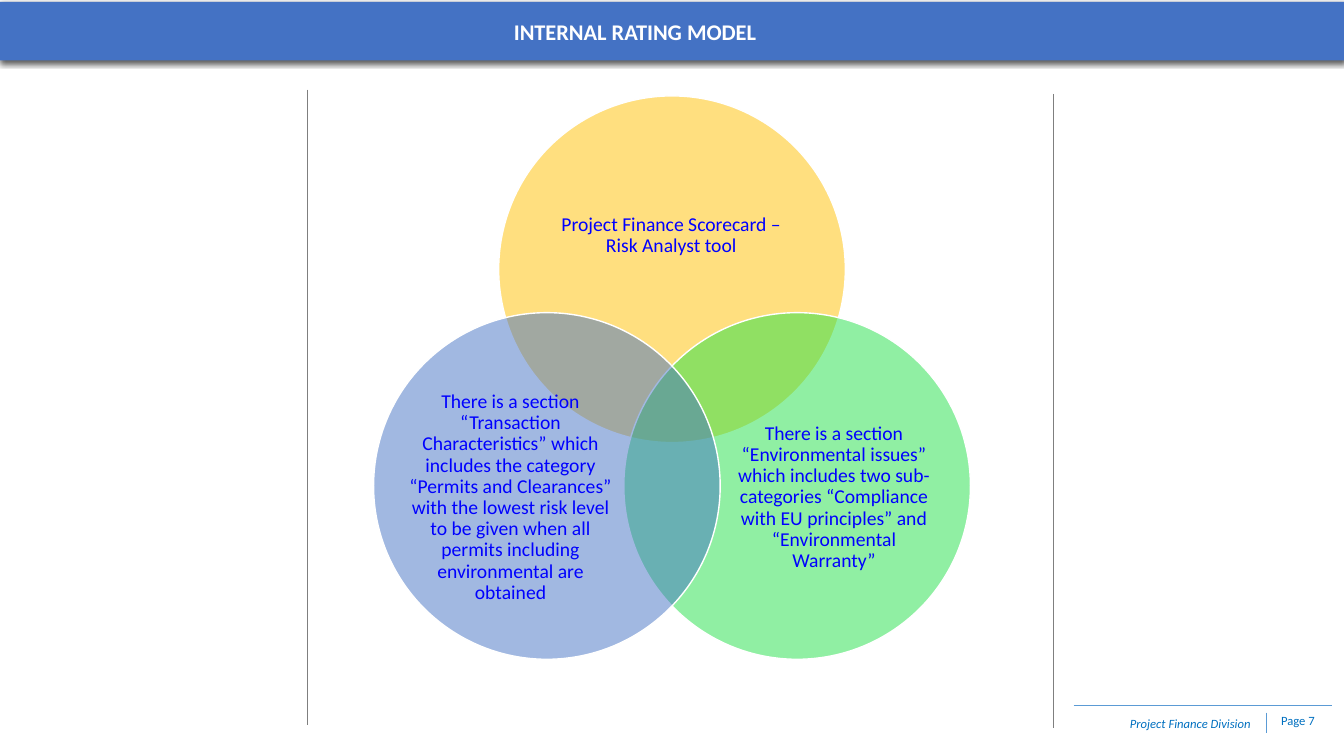
from math import cos, radians, sin

from lxml.etree import SubElement
from pptx import Presentation
from pptx.dml.color import RGBColor
from pptx.enum.shapes import MSO_CONNECTOR as Link, MSO_SHAPE as Shape
from pptx.enum.text import MSO_ANCHOR as Anchor, PP_ALIGN as Align
from pptx.oxml.ns import qn
from pptx.util import Pt

WHITE = RGBColor(0xFF, 0xFF, 0xFF)
BLUE = RGBColor(0x44, 0x72, 0xC4)
AMBER = RGBColor(0xFF, 0xC0, 0x00)
GREEN = RGBColor(0x23, 0xE1, 0x48)
LABEL_BLUE = RGBColor(0x00, 0x00, 0xFF)
FOOTER_BLUE = RGBColor(0x00, 0x70, 0xC0)
FOOTER_RULE = RGBColor(0x5B, 0x9B, 0xD5)
GREY = RGBColor(0x7F, 0x7F, 0x7F)


class Slide:
    font = "Calibri"

    def __init__(self, deck):
        self.page = deck.slides.add_slide(deck.slide_layouts[5])

    def set_words(self, box, words, size, color, align=Align.CENTER, spacing=1.0,
                  inset=None, bold=False, italic=False):
        frame = box.text_frame
        frame.word_wrap = True
        frame.vertical_anchor = Anchor.MIDDLE
        if inset is not None:
            frame.margin_left = frame.margin_right = Pt(inset)
            frame.margin_top = frame.margin_bottom = Pt(inset)
        frame.text = words
        para = frame.paragraphs[0]
        para.alignment = align
        para.line_spacing = spacing
        font = para.font
        font.name, font.size, font.color.rgb = self.font, Pt(size), color
        font.bold, font.italic = bold, italic

    def text(self, left, top, width, height, words, size, color, **style):
        box = self.page.shapes.add_textbox(Pt(left), Pt(top), Pt(width), Pt(height))
        self.set_words(box, words, size, color, **style)

    def title(self, left, top, width, height, words):
        box = self.page.shapes.title
        box.left, box.top, box.width, box.height = map(Pt, (left, top, width, height))
        self.set_words(box, words, 16, WHITE, spacing=0.9, bold=True)

    def banner(self, top, width, height):
        bar = self.page.shapes.add_shape(Shape.RECTANGLE, 0, Pt(top), Pt(width), Pt(height))
        bar.fill.solid()
        bar.fill.fore_color.rgb = BLUE
        bar.line.fill.background()
        effects = SubElement(bar.element.spPr, qn("a:effectLst"))
        shadow = SubElement(effects, qn("a:outerShdw"), blurRad=str(Pt(4.5)),
                            dist=str(Pt(1.5)), dir="5400000", rotWithShape="0")
        black = SubElement(shadow, qn("a:srgbClr"), val="000000")
        SubElement(black, qn("a:alpha"), val="63000")
        self.page.shapes.title.element.addprevious(bar.element)

    def circle(self, center_x, center_y, radius, color):
        disc = self.page.shapes.add_shape(Shape.OVAL, Pt(center_x - radius), Pt(center_y - radius),
                                          Pt(2 * radius), Pt(2 * radius))
        disc.shadow.inherit = False
        disc.fill.solid()
        disc.fill.fore_color.rgb = color
        tint = disc.element.spPr.find(qn("a:solidFill")).find(qn("a:srgbClr"))
        SubElement(tint, qn("a:alpha"), val="50000")
        disc.line.color.rgb = WHITE
        disc.line.width = Pt(1)

    def rule(self, start_x, start_y, end_x, end_y, color):
        line = self.page.shapes.add_connector(Link.STRAIGHT, Pt(start_x), Pt(start_y),
                                              Pt(end_x), Pt(end_y))
        line.line.color.rgb = color
        line.line.width = Pt(0.5)
        SubElement(line.element.spPr, qn("a:effectLst"))


VENN = [
    (-90, AMBER, (388.8, 112.3, 181.4, 111.6), "Project Finance Scorecard – Risk Analyst tool"),
    (30, GREEN, (521.3, 287.3, 149, 136.1),
     "There is a section “Environmental issues” which includes two sub-categories "
     "“Compliance with EU principles” and “Environmental Warranty”"),
    (150, BLUE, (290.2, 287.3, 149, 136.1),
     "There is a section “Transaction Characteristics” which includes the category "
     "“Permits and Clearances” with the lowest risk level to be given when all permits "
     "including environmental are obtained"),
]
CENTER_X, CENTER_Y, ORBIT, RADIUS = 480, 295.5, 103.2, 123.8


def main():
    deck = Presentation()
    deck.slide_width, deck.slide_height = Pt(960), Pt(540)
    slide = Slide(deck)

    slide.banner(1.4, 960, 41.8)
    slide.title(122.4, 1.4, 662.4, 45.4, "INTERNAL RATING MODEL")

    slide.text(800, 502.6, 102.2, 28.8, "Project Finance Division", 9, FOOTER_BLUE,
               align=Align.LEFT, italic=True)
    slide.text(902.2, 500.4, 49.7, 28.8, "Page 7", 9, FOOTER_BLUE)
    slide.rule(766.8, 504, 951.8, 504, FOOTER_RULE)
    slide.rule(904.3, 509, 904.3, 523.4, FOOTER_RULE)

    for angle, color, area, words in VENN:
        turn = radians(angle)
        slide.circle(CENTER_X + ORBIT * cos(turn), CENTER_Y + ORBIT * sin(turn), RADIUS, color)
        slide.text(*area, words, 14, LABEL_BLUE, spacing=0.9, inset=0)

    slide.rule(219.6, 64.1, 219.6, 517.7, GREY)
    slide.rule(752.4, 67, 752.4, 519.8, GREY)

    deck.save("out.pptx")


if __name__ == "__main__":
    main()
